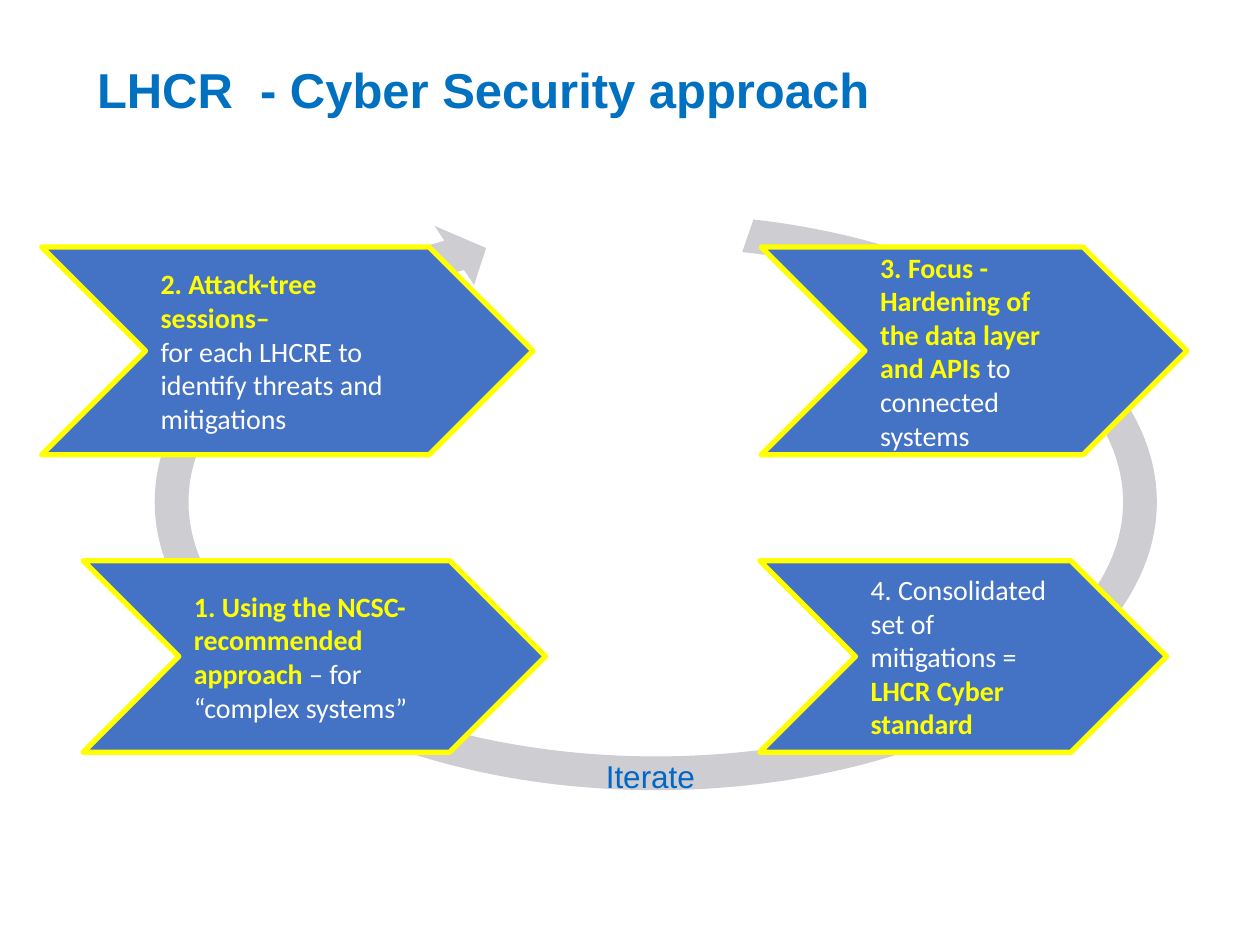
from pptx import Presentation
from pptx.dml.color import RGBColor
from pptx.enum.shapes import MSO_SHAPE as Shape
from pptx.enum.text import MSO_ANCHOR as Anchor, MSO_AUTO_SIZE as AutoSize, PP_ALIGN as Align
from pptx.util import Inches, Pt

WHITE, YELLOW, BLUE, GREY = "FFFFFF", "FFFF00", "4472C4", "CDCDD2"
TITLE_BLUE, LABEL_BLUE = "0070C0", "0067C6"
TOP_ROW, BOTTOM_ROW = (1.96, 1.65), (4.45, 1.52)  # top and height

# Column left, width, row, and paragraphs of (text, highlighted) runs
STEPS = [
    (6.03, 3.23, BOTTOM_ROW, [[("4. Consolidated set of mitigations = ", False),
                               ("LHCR Cyber standard", True)]]),
    (6.04, 3.38, TOP_ROW, [[("3. Focus - Hardening of the data layer and APIs ", True),
                            ("to connected systems", False)]]),
    (0.33, 3.9, TOP_ROW, [[("2. Attack-tree sessions–", True)],
                          [("for each LHCRE to identify threats and mitigations", False)]]),
    (0.66, 3.67, BOTTOM_ROW, [[("1. Using the NCSC- recommended approach ", True),
                               ("– for “complex systems”", False)]]),
]


def color(hex_code):
    return RGBColor.from_string(hex_code)


def add_span(para, text, font, size, hex_code, bold=False):
    para.alignment = Align.LEFT
    span = para.add_run()
    span.text = text
    span.font.name, span.font.size, span.font.bold = font, Pt(size), bold
    span.font.color.rgb = color(hex_code)


def add_filled(page, kind, left, top, width, height, fill):
    shape = page.shapes.add_shape(kind, Inches(left), Inches(top), Inches(width), Inches(height))
    shape.shadow.inherit = False
    shape.fill.solid()
    shape.fill.fore_color.rgb = color(fill)
    return shape


def add_title(page, text):
    title = page.shapes.title
    title.left, title.top = Inches(0.67), Inches(0.42)
    title.width, title.height = Inches(8.66), Inches(0.96)
    frame = title.text_frame
    frame.auto_size = AutoSize.NONE
    frame.vertical_anchor = Anchor.TOP
    add_span(frame.paragraphs[0], text, "Arial", 28, TITLE_BLUE, True)


def add_cycle(page):
    arrow = add_filled(page, Shape.CIRCULAR_ARROW, 1.08, 1.55, 8.25, 4.87, GREY)
    arrow.line.fill.background()
    # Thickness, head angle, end angle, start angle, head width
    for index, value in enumerate((0.055, 3.307, 138.446, 173.443, 0.058)):
        arrow.adjustments[index] = value


def add_step(page, left, width, row, paragraphs):
    top, height = row
    step = add_filled(page, Shape.CHEVRON, left, top, width, height, BLUE)
    step.line.color.rgb = color(YELLOW)
    step.line.width = Pt(3)
    frame = step.text_frame
    frame.word_wrap = True
    frame.vertical_anchor = Anchor.MIDDLE
    frame.margin_left = frame.margin_right = Inches(0.12)
    frame.margin_top = frame.margin_bottom = Inches(0.06)
    for index, spans in enumerate(paragraphs):
        para = frame.add_paragraph() if index else frame.paragraphs[0]
        for text, strong in spans:
            add_span(para, text, "Calibri", 16, YELLOW if strong else WHITE, strong)


def add_label(page, text):
    box = page.shapes.add_textbox(Inches(4.71), Inches(5.96), Inches(1), Inches(0.4))
    frame = box.text_frame
    frame.word_wrap = True
    frame.auto_size = AutoSize.SHAPE_TO_FIT_TEXT
    add_span(frame.paragraphs[0], text, "Arial", 18, LABEL_BLUE)


def main():
    deck = Presentation()
    deck.slide_width, deck.slide_height = Inches(10), Inches(7.5)
    page = deck.slides.add_slide(deck.slide_layouts[5])
    add_title(page, "LHCR  - Cyber Security approach")

    # Cycle behind the four steps
    add_cycle(page)
    for step in STEPS:
        add_step(page, *step)
    add_label(page, "Iterate")
    deck.save("out.pptx")


if __name__ == "__main__":
    main()
